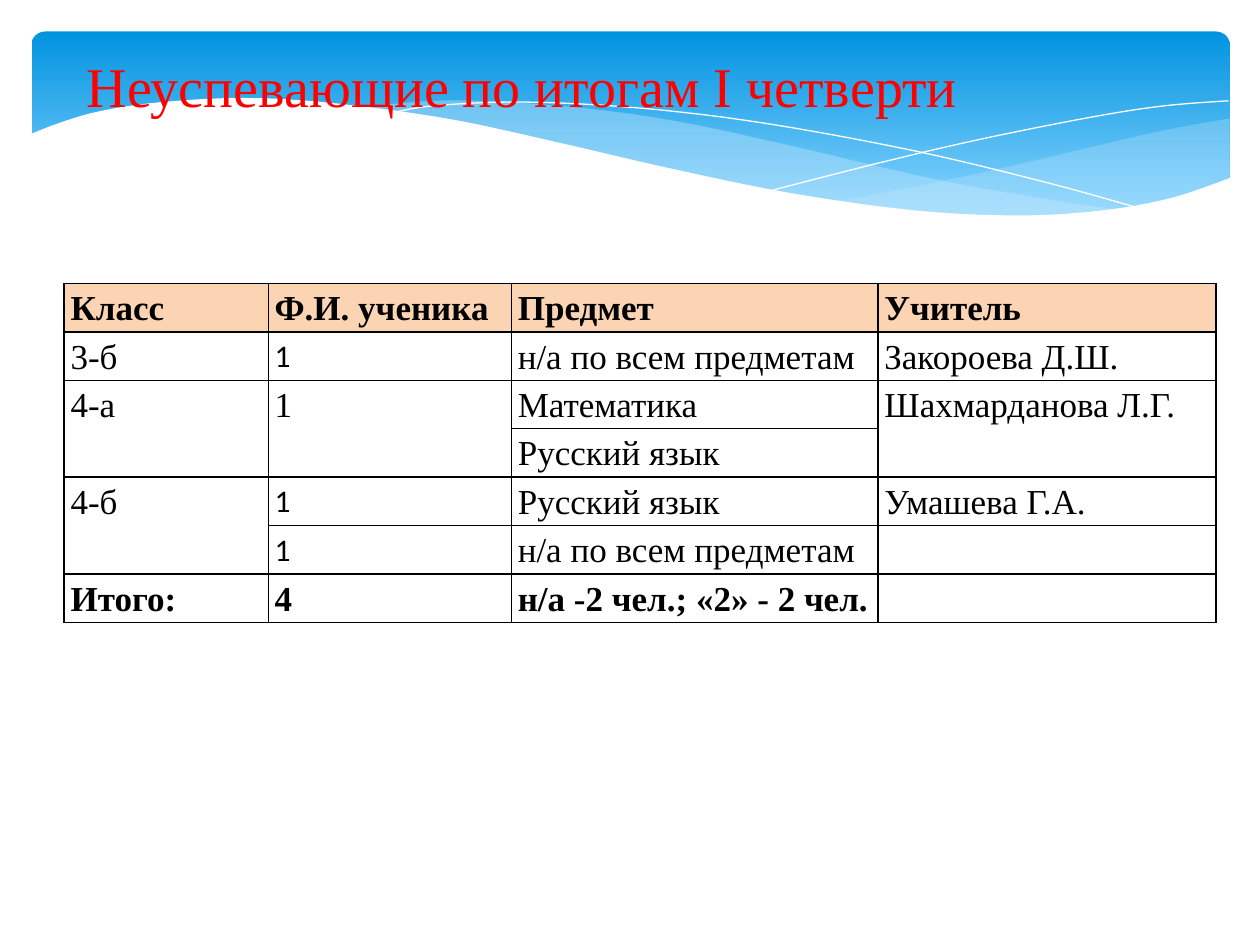
from dataclasses import dataclass

from lxml import etree
from pptx import Presentation
from pptx import util as u
from pptx.dml.color import RGBColor
from pptx.enum import shapes, text
from pptx.oxml import ns

# Content
TITLE = "Неуспевающие по итогам I четверти"
ROWS = [
    ("Класс", "Ф.И. ученика", "Предмет", "Учитель"),
    ("3-б", "1", "н/а по всем предметам", "Закороева Д.Ш."),
    ("4-а", "1", "Математика", "Шахмарданова Л.Г."),
    ("", "", "Русский язык", ""),
    ("4-б", "1", "Русский язык", "Умашева Г.А."),
    ("", "1", "н/а по всем предметам", ""),
    ("Итого:", "4", "н/а -2 чел.; «2» - 2 чел.", ""),
]
MERGES = [(2, 0), (2, 1), (2, 3), (4, 0)]  # top cells of two-row spans
SMALL_CELLS = {(1, 1), (4, 1), (5, 1)}
BOLD_ROWS = {0, len(ROWS) - 1}
COLUMN_WIDTHS = (1.62, 1.93, 2.91, 2.68)
TABLE_LEFT, TABLE_TOP, TABLE_HEIGHT = 0.51, 2.25, 2.69

# Wave edges: each edge is a smooth curve through its points, in inches
RIGHT_WAVE = [
    [(9.76, 0.94), (9.21, 1.04), (8.61, 1.18), (7.79, 1.37), (7.06, 1.52), (6.61, 1.6)],
    [(6.61, 1.6), (7.19, 1.67), (7.81, 1.72), (8.35, 1.72), (8.89, 1.66), (9.35, 1.56), (9.76, 1.41)],
]
LONG_WAVE = [
    [(8.93, 1.67), (8.37, 1.59), (7.41, 1.42), (6.29, 1.16), (5.41, 0.97),
     (4.65, 0.86), (3.8, 0.8), (3.28, 0.81), (2.86, 0.86)],
    [(2.86, 0.86), (3.62, 0.97), (4.49, 1.16), (5.66, 1.43), (6.5, 1.58),
     (7.22, 1.68), (7.85, 1.72), (8.38, 1.72), (8.93, 1.67)],
]
FALLING_LINE = [[(3.09, 0.9), (3.44, 0.84), (4.16, 0.81), (5.1, 0.86), (6.08, 0.98),
                 (7.27, 1.2), (8.31, 1.45), (9.07, 1.66)]]
RISING_LINE = [[(6.13, 1.51), (6.95, 1.3), (7.76, 1.11), (8.66, 0.93), (9.24, 0.84), (9.75, 0.8)]]
WHITE_WAVE = [
    [(9.77, 1.41), (9.3, 1.57), (8.75, 1.67), (8.09, 1.71), (7.26, 1.67), (6.26, 1.53),
     (5.29, 1.33), (4.47, 1.14), (3.65, 0.96), (2.92, 0.85), (2.3, 0.79), (1.77, 0.78),
     (1.19, 0.82), (0.76, 0.89), (0.46, 0.98), (0.23, 1.07)],
    [(0.23, 2.24), (9.77, 2.24)],
]


@dataclass(frozen=True)
class Theme:
    serif: str = "Times New Roman"
    sans: str = "Calibri"
    title_size: int = 32
    cell_size: int = 20
    small_size: int = 18
    title: str = "FF0000"
    ink: str = "000000"
    white: str = "FFFFFF"
    header: str = "FBD4B4"
    sky_top: str = "0293E0"
    sky_bottom: str = "83D3FE"
    wave: str = "C6E7FC"


THEME = Theme()


def color(code):
    return RGBColor.from_string(code)


def style(para, size, code, font, bold=False):
    for span in para.runs:
        span.font.size, span.font.name, span.font.bold = u.Pt(size), font, bold
        span.font.color.rgb = color(code)


def smooth(points, steps=6):
    """Catmull-Rom curve through the points."""
    padded = [points[0], *points, points[-1]]
    curve = [points[0]]
    for a, b, c, d in zip(padded, padded[1:], padded[2:], padded[3:]):
        for step in range(1, steps + 1):
            t = step / steps
            curve.append(tuple(
                0.5 * (2 * q + (r - p) * t + (2 * p - 5 * q + 4 * r - s) * t**2
                       + (3 * q - p - 3 * r + s) * t**3)
                for p, q, r, s in zip(a, b, c, d)))
    return curve


def add_wave(page, edges, fill=None, opacity=None):
    points = [(u.Inches(x), u.Inches(y)) for edge in edges for x, y in smooth(edge)]
    builder = page.shapes.build_freeform(*points[0])
    builder.add_line_segments(points[1:], close=fill is not None)
    wave = builder.convert_to_shape()
    wave.shadow.inherit = False
    if fill is None:
        wave.fill.background()
        wave.line.color.rgb = color(THEME.white)
        wave.line.width = u.Pt(0)
        return
    wave.fill.solid()
    wave.fill.fore_color.rgb = color(fill)
    wave.line.fill.background()
    if opacity:
        tint = wave.element.spPr.find(".//" + ns.qn("a:srgbClr"))
        etree.SubElement(tint, ns.qn("a:alpha"), val=str(opacity * 1000))


def add_borders(cell):
    properties = cell._tc.get_or_add_tcPr()
    for index, side in enumerate(("lnL", "lnR", "lnT", "lnB")):
        line = etree.Element(ns.qn(f"a:{side}"), w=str(u.Pt(1)))
        solid = etree.SubElement(line, ns.qn("a:solidFill"))
        etree.SubElement(solid, ns.qn("a:srgbClr"), val=THEME.ink)
        properties.insert(index, line)


def add_banner(page):
    banner = page.shapes.add_shape(shapes.MSO_SHAPE.ROUNDED_RECTANGLE, u.Inches(0.25),
                                   u.Inches(0.25), u.Inches(9.51), u.Inches(1.56))
    banner.adjustments[0] = 0.07
    banner.shadow.inherit = False
    banner.line.fill.background()
    banner.fill.gradient()
    banner.fill.gradient_angle = 270
    stops = ((0, THEME.sky_top), (0.9, THEME.sky_bottom))
    for stop, (position, code) in zip(banner.fill.gradient_stops, stops):
        stop.position = position
        stop.color.rgb = color(code)
    add_wave(page, RIGHT_WAVE, THEME.wave, 29)
    add_wave(page, LONG_WAVE, THEME.wave, 40)
    add_wave(page, FALLING_LINE)
    add_wave(page, RISING_LINE)
    add_wave(page, WHITE_WAVE, THEME.white)


def add_title(page):
    title = page.shapes.title
    page.shapes.element.append(title.element)  # bring in front of the banner
    title.left, title.top = u.Inches(0.59), u.Inches(0.36)
    title.width, title.height = u.Inches(7.18), u.Inches(0.64)
    frame = title.text_frame
    frame.text = TITLE
    frame.word_wrap = False
    frame.auto_size = text.MSO_AUTO_SIZE.SHAPE_TO_FIT_TEXT
    frame.vertical_anchor = text.MSO_ANCHOR.TOP
    para = frame.paragraphs[0]
    para.alignment = text.PP_ALIGN.LEFT
    style(para, THEME.title_size, THEME.title, THEME.serif)


def add_grades(page):
    table = page.shapes.add_table(
        len(ROWS), len(COLUMN_WIDTHS), u.Inches(TABLE_LEFT), u.Inches(TABLE_TOP),
        u.Inches(sum(COLUMN_WIDTHS)), u.Inches(TABLE_HEIGHT)).table
    table.first_row = table.horz_banding = False
    for column, width in zip(table.columns, COLUMN_WIDTHS):
        column.width = u.Inches(width)
    for r, row in enumerate(ROWS):
        for c, words in enumerate(row):
            cell = table.cell(r, c)
            cell.margin_left = cell.margin_right = u.Inches(0.05)
            cell.margin_top = cell.margin_bottom = 0
            if r == 0:
                cell.fill.solid()
                cell.fill.fore_color.rgb = color(THEME.header)
            else:
                cell.fill.background()
            add_borders(cell)
            if words:
                cell.text_frame.text = words
            para = cell.text_frame.paragraphs[0]
            para.line_spacing = 1.15
            small = (r, c) in SMALL_CELLS
            style(para, THEME.small_size if small else THEME.cell_size, THEME.ink,
                  THEME.sans if small else THEME.serif, r in BOLD_ROWS)
    for r, c in MERGES:
        table.cell(r, c).merge(table.cell(r + 1, c))


def main():
    deck = Presentation()
    deck.slide_width, deck.slide_height = u.Inches(10), u.Inches(7.5)
    page = deck.slides.add_slide(deck.slide_layouts[5])
    add_banner(page)
    add_title(page)
    add_grades(page)
    deck.save("out.pptx")


if __name__ == "__main__":
    main()
